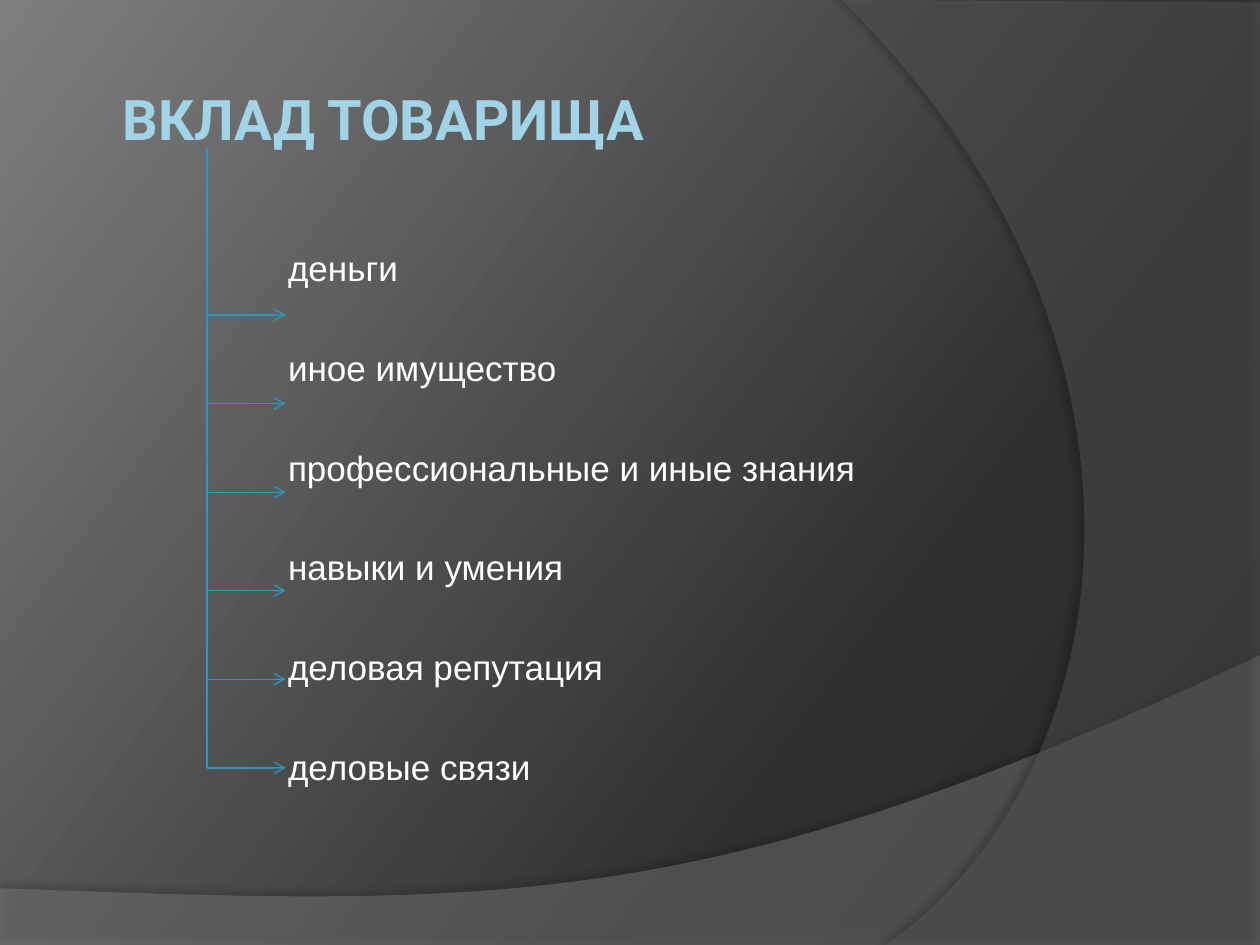
from lxml import etree
from pptx import Presentation
from pptx.dml.color import RGBColor
from pptx.enum.shapes import MSO_CONNECTOR
from pptx.enum.text import MSO_ANCHOR, MSO_AUTO_SIZE, PP_ALIGN
from pptx.oxml.ns import qn
from pptx.util import Pt

STRAIGHT = MSO_CONNECTOR.STRAIGHT
TOP, BOTTOM = MSO_ANCHOR.TOP, MSO_ANCHOR.BOTTOM
LEFT, CENTER = PP_ALIGN.LEFT, PP_ALIGN.CENTER
NO_AUTOFIT = MSO_AUTO_SIZE.NONE
TITLE_ONLY = 5

WIDTH, HEIGHT = 720, 540
LINE_COLOR = "239BC2"
TRUNK_X, TRUNK_TOP, ARROW_END = 118.3, 84.4, 163.3
ARROW_LEVELS = [180, 230.6, 281.3, 337.5, 388.1, 438.8]
CONTRIBUTIONS = [
    "деньги",
    "иное имущество",
    "профессиональные и иные знания",
    "навыки и умения",
    "деловая репутация",
    "деловые связи",
]


def color(hex_string):
    return RGBColor.from_string(hex_string)


def add_child(parent, tag, **attributes):
    values = {name: str(value) for name, value in attributes.items()}
    return etree.SubElement(parent, qn(tag), values)


def set_background(slide, stops, angle):
    fill = slide.background.fill
    fill.gradient()
    fill.gradient_angle = 360 - angle  # python-pptx counts counter-clockwise
    stop_list = slide.element.find(".//" + qn("a:gsLst"))
    for stop in list(stop_list):
        stop_list.remove(stop)
    for position, hex_string in stops:
        stop = add_child(stop_list, "a:gs", pos=position * 1000)
        add_child(stop, "a:srgbClr", val=hex_string)


def curve(points, steps=60):
    """Points along a cubic Bezier curve, without its first point."""
    result = []
    for step in range(1, steps + 1):
        t = step / steps
        weights = ((1 - t) ** 3, 3 * t * (1 - t) ** 2, 3 * t * t * (1 - t), t ** 3)
        result.append(tuple(
            sum(weight * point[axis] for weight, point in zip(weights, points))
            for axis in (0, 1)
        ))
    return result


def add_wave(slide, outline, fill, opacity, shadow_opacity, distance, direction):
    start, *rest = [(Pt(x), Pt(y)) for x, y in outline]
    builder = slide.shapes.build_freeform(*start)
    builder.add_line_segments(rest, close=True)
    shape = builder.convert_to_shape()
    shape.fill.solid()
    shape.fill.fore_color.rgb = color(fill)
    shape.line.fill.background()
    properties = shape.element.spPr
    add_child(properties.find(".//" + qn("a:srgbClr")), "a:alpha", val=opacity * 1000)
    # Soft shadow along the curved edge
    effects = add_child(properties, "a:effectLst")
    shadow = add_child(effects, "a:outerShdw", blurRad=Pt(4), dist=Pt(distance),
                       dir=direction * 60000, algn="ctr", rotWithShape=0)
    shadow_color = add_child(shadow, "a:srgbClr", val="000000")
    add_child(shadow_color, "a:alpha", val=shadow_opacity * 1000)


def set_text(shape, lines, *, font, size, text_color, bold=False, align=LEFT,
             anchor=TOP, insets=(0, 0, 0, 0), gap=0):
    frame = shape.text_frame
    frame.auto_size = NO_AUTOFIT
    frame.word_wrap = True
    frame.vertical_anchor = anchor
    (frame.margin_left, frame.margin_top,
     frame.margin_right, frame.margin_bottom) = [Pt(inset) for inset in insets]
    for index, line in enumerate(lines):
        paragraph = frame.add_paragraph() if index else frame.paragraphs[0]
        paragraph.alignment = align
        paragraph.space_before = Pt(gap if index else 0)
        run = paragraph.add_run()
        run.text = line
        run.font.name = font
        run.font.size = Pt(size)
        run.font.bold = bold
        run.font.color.rgb = color(text_color)


def add_line(slide, x1, y1, x2, y2, arrow=False):
    connector = slide.shapes.add_connector(STRAIGHT, Pt(x1), Pt(y1), Pt(x2), Pt(y2))
    connector.line.color.rgb = color(LINE_COLOR)
    connector.line.width = Pt(0.75)
    if arrow:
        add_child(connector.element.spPr.find(qn("a:ln")), "a:tailEnd", type="arrow")
    add_child(connector.element.spPr, "a:effectLst")


def main():
    presentation = Presentation()
    presentation.slide_width, presentation.slide_height = Pt(WIDTH), Pt(HEIGHT)
    slide = presentation.slides.add_slide(presentation.slide_layouts[TITLE_ONLY])
    title = slide.shapes.title

    # Backdrop: gradient and two translucent waves
    set_background(slide, [(0, "282828"), (30, "2F2F2F"), (100, "7E7E7E")], 217)
    lower_edge = curve([(WIDTH, 374.4), (402.5, 524.9), (281.5, 517.7), (0, 507.6)])
    add_wave(slide, [(0, HEIGHT), (WIDTH, HEIGHT), (WIDTH, 374.4)] + lower_edge,
             "7F7F7F", 45, 35, 3.5, 270)
    right_edge = curve([(506.2, HEIGHT), (641.5, 445.7), (681.8, 198), (481, 0)])
    add_wave(slide, [(WIDTH, 1.4), (WIDTH, HEIGHT), (506.2, HEIGHT)] + right_edge,
             "5E5E5E", 40, 45, 4, 180)

    # Title, brought in front of the waves
    title.element.getparent().append(title.element)
    title.left, title.top, title.width, title.height = Pt(0), Pt(44.6), Pt(438.5), Pt(67.7)
    set_text(title, ["ВКЛАД ТОВАРИЩА"], font="Roboto", size=32, text_color="A1D4E7",
             bold=True, align=CENTER, insets=(3.6, 3.6, 3.6, 3.6))

    # List of contributions
    box = slide.shapes.add_textbox(Pt(157.5), Pt(140.4), Pt(533.5), Pt(309.6))
    set_text(box, CONTRIBUTIONS, font="Arial", size=20, text_color="FFFFFF",
             anchor=BOTTOM, insets=(7.2, 0, 3.6, 0), gap=33)

    # Trunk line with one arrow per contribution
    add_line(slide, TRUNK_X, TRUNK_TOP, TRUNK_X, ARROW_LEVELS[-1])
    for level in ARROW_LEVELS:
        add_line(slide, TRUNK_X, level, ARROW_END, level, arrow=True)

    presentation.save("out.pptx")


if __name__ == "__main__":
    main()
